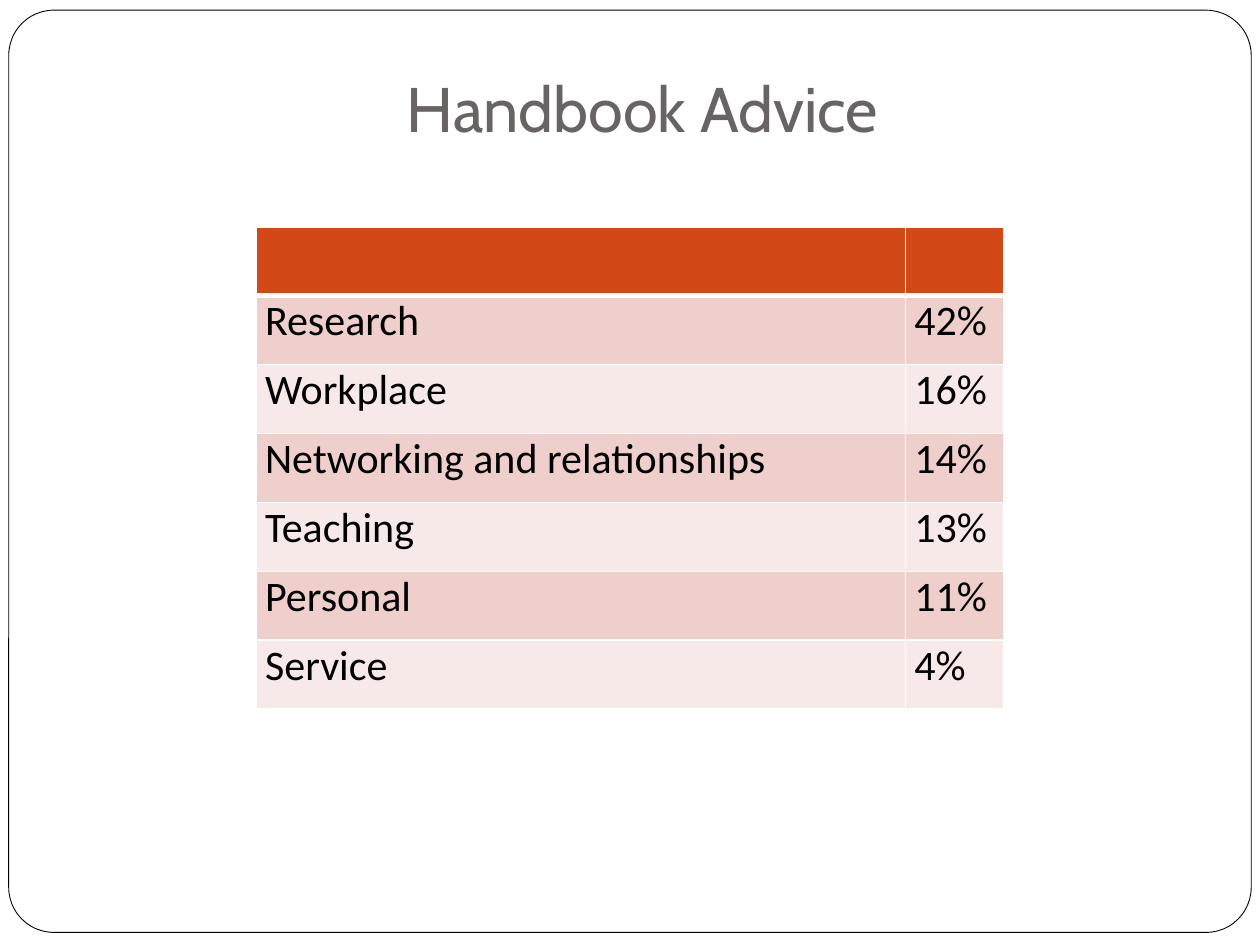
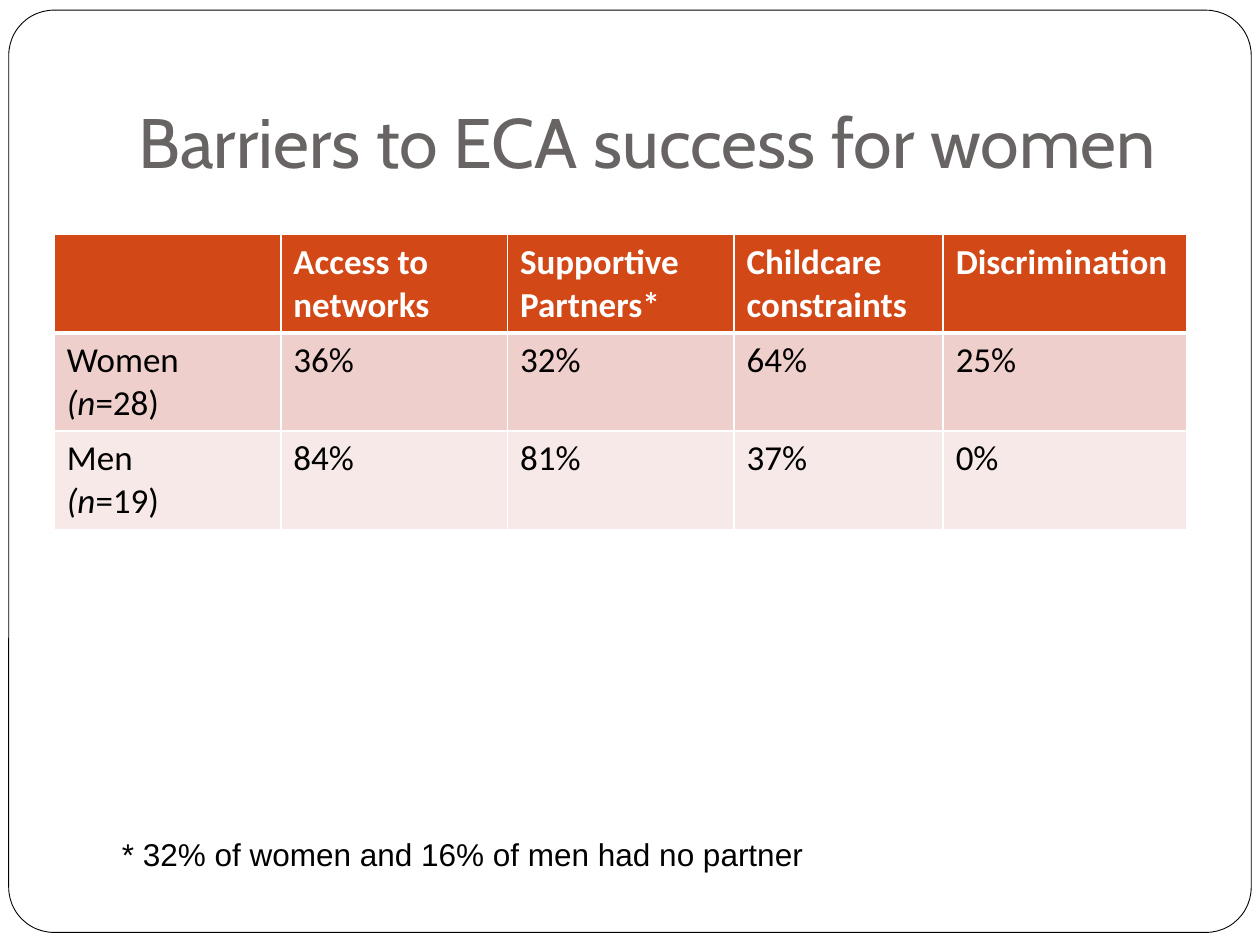
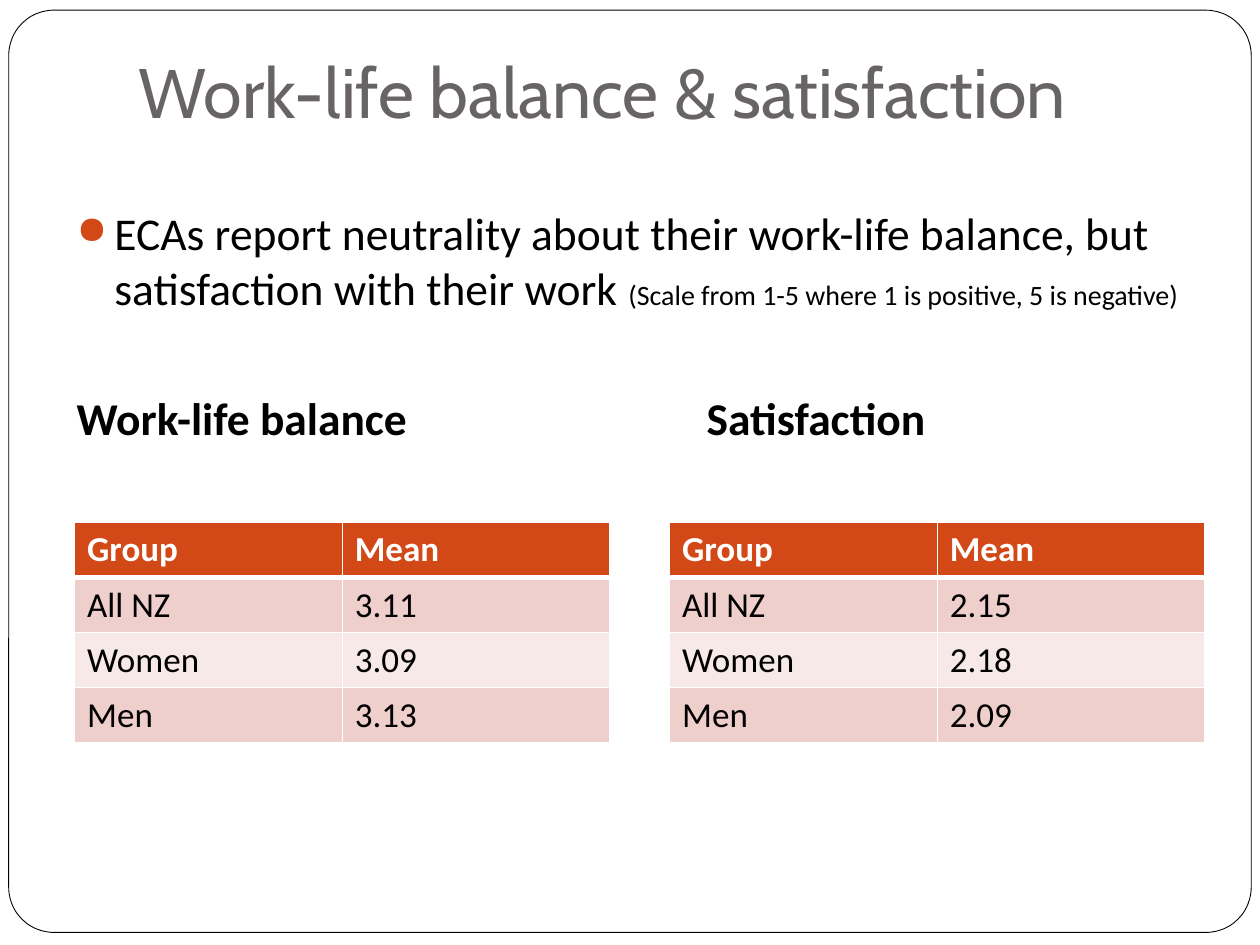
from lxml import etree
from pptx import Presentation
from pptx.dml.color import RGBColor
from pptx.enum import shapes, text
from pptx.oxml import ns
from pptx.util import Pt

WHITE = RGBColor(0xFF, 0xFF, 0xFF)
BLACK = RGBColor(0, 0, 0)
TITLE_GREY = RGBColor(0x69, 0x64, 0x64)
ORANGE = RGBColor(0xD3, 0x48, 0x17)
BANDS = (RGBColor(0xEF, 0xCF, 0xCC), RGBColor(0xF7, 0xE9, 0xE8))
TITLE_FONT, BODY_FONT, NOTE_FONT = "Cabin", "Calibri", "Arial"


def add_child(parent, tag, **attributes):
    return etree.SubElement(parent, ns.qn(tag), attributes)


def set_font(font, name, size, color, bold=False):
    font.name, font.size, font.bold = name, Pt(size), bold
    font.color.rgb = color


def set_margins(box, left, top, right, bottom):
    box.margin_left, box.margin_top = Pt(left), Pt(top)
    box.margin_right, box.margin_bottom = Pt(right), Pt(bottom)


def add_slide(prs, heading, left, width, height, size=40, align=text.PP_ALIGN.LEFT):
    """Slide with the rounded frame and a bottom-anchored title."""
    slide = prs.slides.add_slide(prs.slide_layouts[5])
    frame = slide.shapes.add_shape(shapes.MSO_SHAPE.ROUNDED_RECTANGLE,
                                   Pt(5), Pt(5.8), Pt(710), Pt(527))
    frame.adjustments[0] = 0.049
    frame.shadow.inherit = False
    frame.fill.solid()
    frame.fill.fore_color.rgb = WHITE
    frame.line.color.rgb = BLACK
    frame.line.width = Pt(0.5)

    title = slide.shapes.title
    title.left, title.top, title.width, title.height = Pt(left), Pt(21.6), Pt(width), Pt(height)
    title.text = heading
    title.text_frame.auto_size = text.MSO_AUTO_SIZE.NONE
    title.text_frame.vertical_anchor = text.MSO_ANCHOR.BOTTOM
    set_margins(title.text_frame, 7.2, 3.6, 7.2, 7.2)
    paragraph = title.text_frame.paragraphs[0]
    paragraph.alignment = align
    set_font(paragraph.font, TITLE_FONT, size, TITLE_GREY)
    frame._element.addnext(title._element)  # title in front of the frame
    return slide


def add_text_box(slide, left, top, width, height):
    box = slide.shapes.add_textbox(Pt(left), Pt(top), Pt(width), Pt(height))
    box.text_frame.word_wrap = True
    return box.text_frame


def set_borders(cell, top, bottom):
    properties = cell._tc.get_or_add_tcPr()
    for side, width in (("L", 1), ("R", 1), ("T", top), ("B", bottom)):
        line = add_child(properties, f"a:ln{side}", w=str(Pt(width)))
        add_child(add_child(line, "a:solidFill"), "a:srgbClr", val=str(WHITE))


def write_cell(cell, content, size, color, bold):
    """One paragraph per line; the opening of "(n=...)" is italic."""
    for index, line in enumerate(content.split("\n")):
        frame = cell.text_frame
        paragraph = frame.add_paragraph() if index else frame.paragraphs[0]
        set_font(paragraph.font, BODY_FONT, size, color, bold)
        if line.startswith("(n"):
            symbol = paragraph.add_run()
            symbol.text, symbol.font.italic = "(n", True
            line = line[2:]
        if line:
            paragraph.add_run().text = line


def add_banded_table(slide, left, top, widths, row_height, rows, size=20, margins=None):
    table = slide.shapes.add_table(len(rows), len(widths), Pt(left), Pt(top),
                                   Pt(sum(widths)), Pt(row_height * len(rows))).table
    for column, width in zip(table.columns, widths):
        column.width = Pt(width)
    for r, row in enumerate(rows):
        table.rows[r].height = Pt(row_height)
        header = r == 0
        for c, content in enumerate(row):
            cell = table.cell(r, c)
            set_borders(cell, 3 if r == 1 else 1, 3 if header else 1)
            cell.fill.solid()
            cell.fill.fore_color.rgb = ORANGE if header else BANDS[(r - 1) % 2]
            if margins:
                set_margins(cell, *margins)
            write_cell(cell, content, size, WHITE if header else BLACK, header)


def add_bullet(paragraph):
    properties = paragraph._p.get_or_add_pPr()
    properties.set("marL", str(Pt(21.6)))
    properties.set("indent", str(-Pt(21.6)))
    add_child(add_child(properties, "a:buClr"), "a:srgbClr", val=str(ORANGE))
    add_child(properties, "a:buSzPct", val="85000")
    add_child(properties, "a:buChar", char="●")


def add_tab_stop(paragraph, position):
    stops = add_child(paragraph._p.get_or_add_pPr(), "a:tabLst")
    add_child(stops, "a:tab", pos=str(Pt(position)), algn="l")


def add_advice_slide(prs):
    slide = add_slide(prs, "Handbook Advice", 50.4, 633.6, 68.4, 36, text.PP_ALIGN.CENTER)
    advice = [("", ""), ("Research", "42%"), ("Workplace", "16%"),
              ("Networking and relationships", "14%"), ("Teaching", "13%"),
              ("Personal", "11%"), ("Service", "4%")]
    add_banded_table(slide, 146.5, 129.6, (371, 56), 39.4, advice, 24, (5, 0, 5, 0))


def add_barriers_slide(prs):
    slide = add_slide(prs, "Barriers to ECA success for women", 72, 612, 90)
    barriers = [("", "Access to\nnetworks", "Supportive Partners*",
                 "Childcare\nconstraints", "Discrimination"),
                ("Women\n(n=28)", "36%", "32%", "64%", "25%"),
                ("Men\n(n=19)", "84%", "81%", "37%", "0%")]
    add_banded_table(slide, 31, 134, (129.5, 129.5, 129.5, 119.5, 139), 55.8, barriers)
    footnote = add_text_box(slide, 62.6, 473.8, 623.5, 29).paragraphs[0]
    footnote.text = "* 32% of women and 16% of men had no partner"
    set_font(footnote.font, NOTE_FONT, 18, BLACK)


def add_balance_slide(prs):
    slide = add_slide(prs, "Work-life balance & satisfaction", 72, 612, 61.2)

    # Finding, with the scale in smaller type
    body = add_text_box(slide, 36.7, 113.8, 647.3, 377.3)
    finding = body.paragraphs[0]
    finding.space_before = Pt(5.8)
    add_bullet(finding)
    for wording, size in (
            ("ECAs report neutrality about their work-life balance, "
             "but satisfaction with their work ", 26),
            ("(Scale from 1-5 where 1 is positive, 5 is negative)", 16)):
        run = finding.add_run()
        run.text = wording
        set_font(run.font, BODY_FONT, size, BLACK)

    # Table headings on one line
    headings = body.add_paragraph()
    headings.space_before = Pt(43.3)
    add_tab_stop(headings, 360)
    headings.add_run().text = "Work-life balance\tSatisfaction"
    set_font(headings.font, BODY_FONT, 26, BLACK, True)

    groups = ("All NZ", "Women", "Men")
    for left, means in ((42.6, ("3.11", "3.09", "3.13")),
                        (382.6, ("2.15", "2.18", "2.09"))):
        add_banded_table(slide, left, 298.4, (153, 153), 31.5,
                         [("Group", "Mean"), *zip(groups, means)])


def main():
    prs = Presentation()
    prs.slide_width, prs.slide_height = Pt(720), Pt(540)
    add_advice_slide(prs)
    add_barriers_slide(prs)
    add_balance_slide(prs)
    prs.save("out.pptx")


if __name__ == "__main__":
    main()
